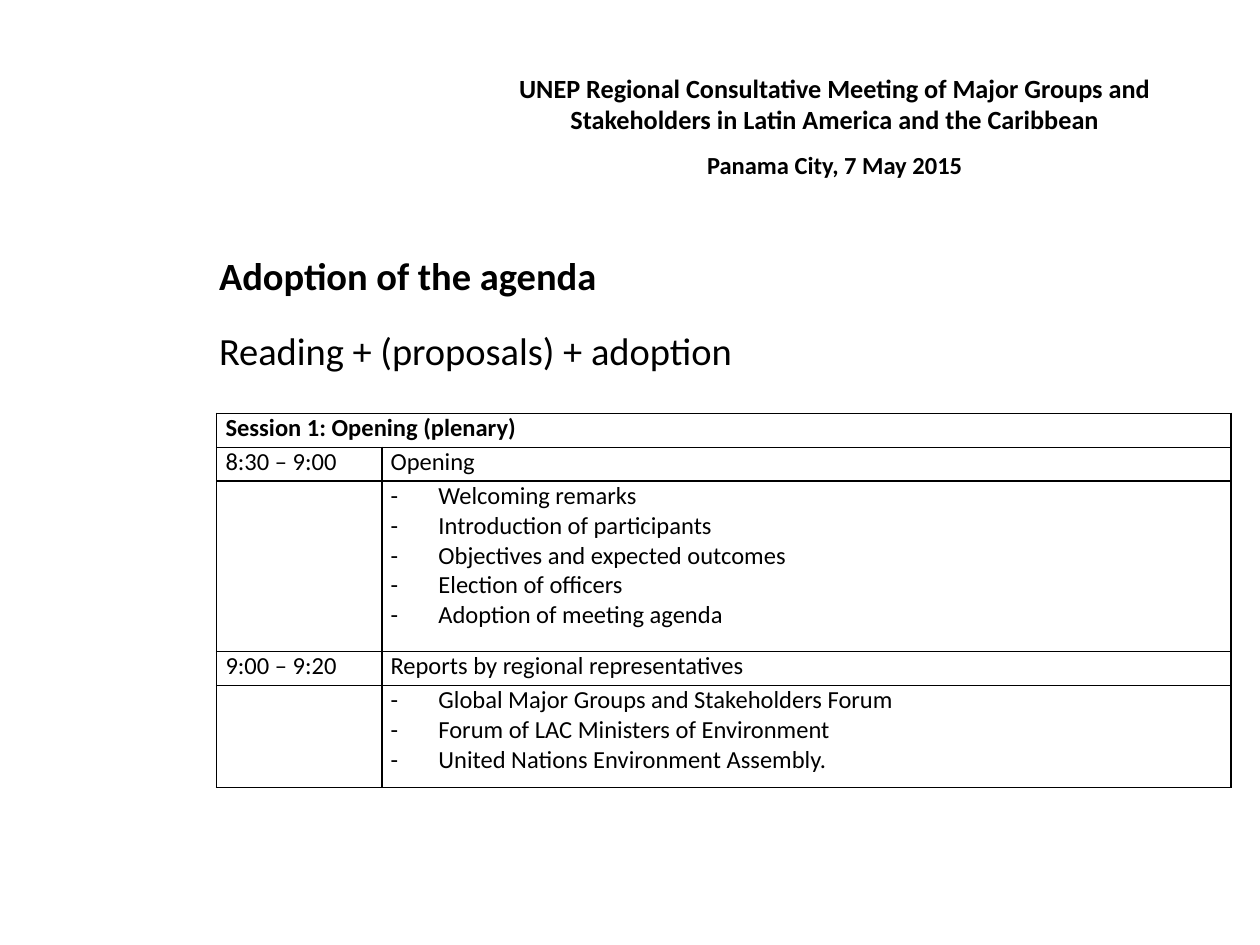
from pptx import Presentation
from pptx.dml.color import RGBColor
from pptx.enum import text
from pptx.oxml import parse_xml
from pptx.oxml.ns import nsdecls
from pptx.util import Inches, Pt

BLACK = RGBColor(0, 0, 0)
DASH_INDENT = Inches(0.38)


def style(paragraph, size, bold, align):
    paragraph.alignment = align
    for run in paragraph.runs:
        run.font.name = "Calibri"
        run.font.size = Pt(size)
        run.font.bold = bold
        run.font.color.rgb = BLACK


def add_text(slide, box, lines, align, anchor):
    frame = slide.shapes.add_textbox(*[Inches(v) for v in box]).text_frame
    frame.word_wrap = True
    frame.vertical_anchor = anchor
    frame.text = "\n".join(line for line, size, bold in lines)
    for paragraph, (line, size, bold) in zip(frame.paragraphs, lines):
        style(paragraph, size, bold, align)
    return frame.paragraphs


prs = Presentation()
prs.slide_width, prs.slide_height = Inches(10), Inches(7.5)
slide = prs.slides.add_slide(prs.slide_layouts[6])
center, left, justify = text.PP_ALIGN.CENTER, text.PP_ALIGN.LEFT, text.PP_ALIGN.JUSTIFY
top, middle = text.MSO_ANCHOR.TOP, text.MSO_ANCHOR.MIDDLE

add_text(slide, (3.75, 0.39, 5.75, 0.86),
         [("UNEP Regional Consultative Meeting of Major Groups and "
           "Stakeholders in Latin America and the Caribbean", 15, True)], center, middle)

adoption, reading = add_text(slide, (1.64, 1.95, 7.86, 4.75),
                             [("Adoption of the agenda", 22, True),
                              ("Reading + (proposals) + adoption", 22, False)], left, top)
adoption.space_after = Pt(12)
reading.space_before = Pt(4.4)

place_and_date, = add_text(slide, (3.75, 0.78, 5.75, 0.94),
                           [("Panama City, 7 May 2015", 14, True)], center, middle)
place_and_date.line_spacing = 1.5

sessions = [
    (0.27, "Session 1: Opening (plenary)", []),
    (0.27, "8:30 – 9:00", ["Opening"]),
    (1.35, "", ["Welcoming remarks", "Introduction of participants",
                "Objectives and expected outcomes", "Election of officers",
                "Adoption of meeting agenda"]),
    (0.27, "9:00 – 9:20", ["Reports by regional representatives"]),
    (0.81, "", ["Global Major Groups and Stakeholders Forum",
                "Forum of LAC Ministers of Environment",
                "United Nations Environment Assembly."]),
]
agenda = slide.shapes.add_table(len(sessions), 2, Inches(1.72), Inches(3.28),
                                Inches(8.05), Inches(2.97)).table
agenda.first_row = agenda.horz_banding = False
agenda.columns[0].width, agenda.columns[1].width = Inches(1.31), Inches(6.74)
agenda.cell(0, 0).merge(agenda.cell(0, 1))

for row, (height, time, items) in enumerate(sessions):
    agenda.rows[row].height = Inches(height)
    for col, lines in enumerate(([time], items)):
        cell = agenda.cell(row, col)
        cell.margin_left = cell.margin_right = Inches(0.07)
        cell.margin_top = cell.margin_bottom = 0
        for side in "LRTB":
            cell._tc.get_or_add_tcPr().append(parse_xml(
                f'<a:ln{side} {nsdecls("a")} w="{Pt(1)}"><a:solidFill>'
                f'<a:srgbClr val="{BLACK}"/></a:solidFill></a:ln{side}>'))
        cell.fill.background()
        if not any(lines):
            continue
        cell.text_frame.text = "\n".join(lines)
        for paragraph in cell.text_frame.paragraphs:
            style(paragraph, 14, row == 0, justify)
            if col == 1 and not time:
                props = paragraph._p.get_or_add_pPr()
                props.set("marL", str(DASH_INDENT))
                props.set("indent", str(-DASH_INDENT))
                props.append(parse_xml(f'<a:buFont {nsdecls("a")} typeface="Calibri"/>'))
                props.append(parse_xml(f'<a:buChar {nsdecls("a")} char="-"/>'))

prs.save("out.pptx")
